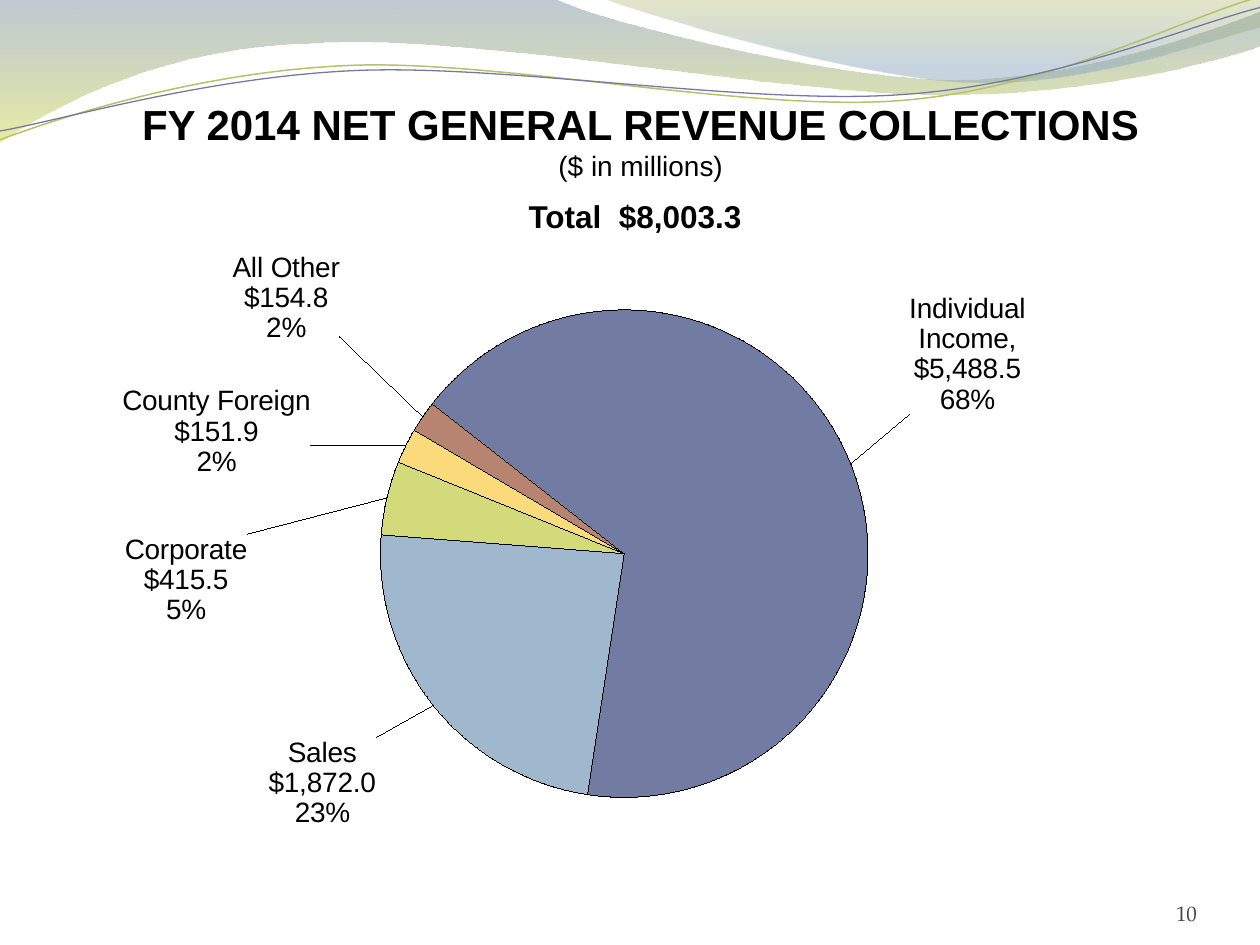
from typing import NamedTuple

from lxml.etree import SubElement as Sub
from pptx import Presentation
from pptx.chart.data import CategoryChartData as Data
from pptx.dml.color import RGBColor as Rgb
from pptx.enum.chart import XL_CHART_TYPE as Kind, XL_LABEL_POSITION as Spot
from pptx.enum.text import MSO_ANCHOR as Anchor, MSO_AUTO_SIZE as Auto, PP_ALIGN as Align
from pptx.oxml.ns import qn
from pptx.util import Inches, Pt

WIDE, HIGH = Inches(10), Inches(7.5)
COL, ROW = WIDE / 10, HIGH / 7.5
SANS, SERIF = "Arial", "TeX Gyre Pagella"


class Box(NamedTuple):
    """Left, top, width and height in columns and rows."""
    x: float
    y: float
    w: float
    h: float


class Stop(NamedTuple):
    """One gradient stop with its opacity in percent."""
    pos: float
    tint: str
    solid: int


class Wave(NamedTuple):
    """A start point, then lines (2 numbers) and curves (6 numbers)."""
    start: tuple
    legs: list
    stops: tuple = ()
    tint: str = ""
    thick: float = 0


class Slice(NamedTuple):
    """A pie slice, its label, and the label's shift in columns and rows."""
    name: str
    value: float
    tint: str
    label: str
    right: float
    down: float


CHART = Box(0.83, 2, 8, 4.83)
PIE = Box(3.02, 2.46, 3.87, 3.87)
WAVES = [
    Wave((0, 0), [(4.4, -0.01), (4.76, 0.17, 6.64, 0.63, 7.58, 0.63),
                  (8.53, 0.63, 9.58, 0.26, 10, 0.09), (10.01, 0.36),
                  (9.83, 0.44, 8.7, 0.76, 7.46, 0.75),
                  (6.22, 0.75, 3.82, 0.28, 2.57, 0.34),
                  (1.29, 0.36, 0.46, 0.83, -0.01, 1.13)],
         (Stop(0, "72889B", 45), Stop(1, "D3DE57", 55))),
    Wave((4.79, -0.01), [(5.09, 0.11, 6.82, 0.62, 7.69, 0.65),
                         (8.56, 0.69, 9.61, 0.32, 10, 0.21), (10, 0)],
         (Stop(0, "A4AC50", 30), Stop(0.8, "84A3BD", 45))),
    Wave((0, 1.11), [(0.48, 0.93, 1.58, 0.57, 2.77, 0.52),
                     (3.95, 0.47, 5.93, 0.89, 7.13, 0.8),
                     (8.33, 0.71, 9.38, 0.15, 9.98, -0.02)],
         tint="B9C06C", thick=0.85),
    Wave((0, 1.04), [(0.47, 0.96, 1.64, 0.61, 2.83, 0.56),
                     (4.03, 0.51, 5.97, 0.84, 7.17, 0.75),
                     (8.36, 0.67, 9.41, 0.21, 10, 0.06)],
         tint="727CA3", thick=0.75),
]
SLICES = [
    Slice("Individual Income", 5403.5, "727CA3",
          "Individual\nIncome,\n$5,488.5\n68%", 0.41, -0.37),
    Slice("Sales", 1925.1, "9FB8CD", "Sales\n$1,872.0\n23%", -0.41, 0.22),
    Slice("Corporate", 396.1, "D2DA7A", "Corporate\n$415.5\n5%", -1.05, 1.02),
    Slice("County Foreign", 189, "FADA7A", "County Foreign\n$151.9\n2%", -0.7, 0.27),
    Slice("All Other", 169, "B88472", "All Other\n$154.8\n2%", -0.61, -0.6),
]


def hue(code: str) -> Rgb:
    """Turn a hex string into a colour."""
    return Rgb.from_string(code)


def frame(box: Box) -> tuple:
    """Turn grid units into slide lengths."""
    return round(box.x * COL), round(box.y * ROW), round(box.w * COL), round(box.h * ROW)


def style(para, size: float, bold: bool = False, face: str = SANS,
          tint: str = "000000", align=Align.CENTER) -> None:
    """Format one paragraph and its runs."""
    para.alignment = align
    para.space_before = Pt(0)
    for run in para.runs:
        run.font.size, run.font.bold, run.font.name = Pt(size), bold, face
        run.font.color.rgb = hue(tint)


def bend(shape, legs: list) -> None:
    """Turn the six-number legs of a freeform into curves."""
    for line, leg in zip(list(shape.element.iter(qn("a:lnTo"))), legs):
        if len(leg) == 2:
            continue
        line.remove(line[0])
        curve = Sub(line.getparent(), qn("a:cubicBezTo"))
        for x, y in zip(leg[::2], leg[1::2]):
            node = Sub(curve, qn("a:pt"))
            node.set("x", str(round(x * COL) - shape.left))
            node.set("y", str(round(y * ROW) - shape.top))
        line.getparent().replace(line, curve)


def draw_wave(slide, wave: Wave) -> None:
    """Draw a filled or a stroked wave."""
    ends = [(leg[-2] * COL, leg[-1] * ROW) for leg in wave.legs]
    pen = slide.shapes.build_freeform(wave.start[0] * COL, wave.start[1] * ROW)
    pen.add_line_segments(ends, close=bool(wave.stops))
    shape = pen.convert_to_shape()
    bend(shape, wave.legs)
    shape.shadow.inherit = False
    if not wave.stops:
        shape.fill.background()
        shape.line.color.rgb, shape.line.width = hue(wave.tint), Pt(wave.thick)
        return
    shape.line.fill.background()
    shape.fill.gradient()
    shape.fill.gradient_angle = 270
    for mark, stop in zip(shape.fill.gradient_stops, wave.stops):
        mark.position, mark.color.rgb = stop.pos, hue(stop.tint)
    for node, stop in zip(shape.element.spPr.iter(qn("a:srgbClr")), wave.stops):
        Sub(node, qn("a:alpha")).set("val", str(stop.solid * 1000))


def draw_page(slide, box: Box, text: str) -> None:
    """Draw the page number."""
    body = slide.shapes.add_textbox(*frame(box)).text_frame
    body.word_wrap, body.vertical_anchor = True, Anchor.BOTTOM
    body.margin_left = body.margin_right = body.margin_top = body.margin_bottom = 0
    body.text = text
    style(body.paragraphs[0], 12, face=SERIF, tint="43434F", align=Align.RIGHT)


def fill_holder(slide, shape, box: Box, text: str) -> list:
    """Move a placeholder to the front and give it its text."""
    shape.left, shape.top, shape.width, shape.height = frame(box)
    slide.shapes.element.append(shape.element)
    body = shape.text_frame
    body.auto_size, body.vertical_anchor = Auto.NONE, Anchor.TOP
    body.text = text
    return list(body.paragraphs)


def set_hand(lay, rules: dict) -> None:
    """Write a manual layout into a layout element."""
    hand = Sub(lay, qn("c:manualLayout"))
    for key, val in rules.items():
        Sub(hand, qn("c:" + key)).set("val", str(val))


def set_flag(node, key: str) -> None:
    """Switch on one option of a label element."""
    flag = node.find(qn("c:" + key))
    if flag is None:
        flag = Sub(node, qn("c:" + key))
    flag.set("val", "1")


def set_label(point, part: Slice) -> None:
    """Give a pie point its label text and place."""
    label = point.data_label
    label.text_frame.text = part.label
    for para in label.text_frame.paragraphs:
        style(para, 16)
    label.position = Spot.BEST_FIT
    node = label.text_frame._txBody.getparent().getparent()
    for old in node.findall(qn("c:layout")):
        node.remove(old)
    lay = Sub(node, qn("c:layout"))
    node.insert(1, lay)
    set_hand(lay, dict(x=round(part.right / CHART.w, 4), y=round(part.down / CHART.h, 4)))
    for key in ("showVal", "showCatName", "showPercent"):
        set_flag(node, key)


def draw_pie(slide) -> None:
    """Draw the pie of revenue sources with its labels."""
    data = Data(number_format='"$"#,##0.0')
    data.categories = [s.name for s in SLICES]
    data.add_series("Series 1", [s.value for s in SLICES])
    chart = slide.shapes.add_chart(Kind.PIE, *frame(CHART), data).chart
    chart.has_title = chart.has_legend = False
    chart.font.size, chart.font.name = Pt(18), SERIF
    chart.font.color.rgb = hue("000000")
    row = chart.plots[0].series[0]
    row.format.line.color.rgb = hue("000000")
    tags = row.data_labels
    tags.show_value = tags.show_percentage = tags.show_category_name = True
    tags.number_format, tags.number_format_is_linked = '"$"#,##0.0', False
    tags.font.size, tags.font.name = Pt(16), SANS
    tags.font.color.rgb = hue("000000")
    for i, part in enumerate(SLICES):
        form = row.points[i].format
        form.fill.solid()
        form.fill.fore_color.rgb = hue(part.tint)
        form.line.color.rgb = hue("000000")
        set_label(row.points[i], part)
    set_flag(chart.element.find(".//" + qn("c:dLbls")), "showLeaderLines")
    area = chart.element.find(".//" + qn("c:plotArea"))
    pie = area.find(qn("c:pieChart"))
    for host, key in ((pie, "c:firstSliceAng"), (area, "c:layout")):
        for old in host.findall(qn(key)):
            host.remove(old)
    Sub(pie, qn("c:firstSliceAng")).set("val", "308")
    lay = Sub(area, qn("c:layout"))
    area.insert(0, lay)
    set_hand(lay, dict(layoutTarget="inner", xMode="edge", yMode="edge",
                       x=round((PIE.x - CHART.x) / CHART.w, 4),
                       y=round((PIE.y - CHART.y) / CHART.h, 4),
                       w=round(PIE.w / CHART.w, 4), h=round(PIE.h / CHART.h, 4)))


def main() -> None:
    """Build the slide and save it."""
    deck = Presentation()
    deck.slide_width, deck.slide_height = WIDE, HIGH
    slide = deck.slides.add_slide(deck.slide_layouts[1])
    for wave in WAVES:
        draw_wave(slide, wave)
    draw_page(slide, Box(8.67, 6.95, 0.83, 0.4), "10")
    total = fill_holder(slide, slide.placeholders[1], Box(3.75, 1.51, 2.58, 0.4),
                        "Total  $8,003.3")[0]
    style(total, 18, bold=True)
    pr = total._p.get_or_add_pPr()
    pr.set("marL", "0")
    pr.set("indent", "0")
    Sub(pr, qn("a:buNone"))
    head, note = fill_holder(slide, slide.shapes.title, Box(0.67, 0.73, 8.83, 0.77),
                             "FY 2014 NET GENERAL REVENUE COLLECTIONS\n($ in millions)")
    style(head, 24, bold=True)
    style(note, 16)
    draw_pie(slide)
    deck.save("out.pptx")


if __name__ == "__main__":
    main()
